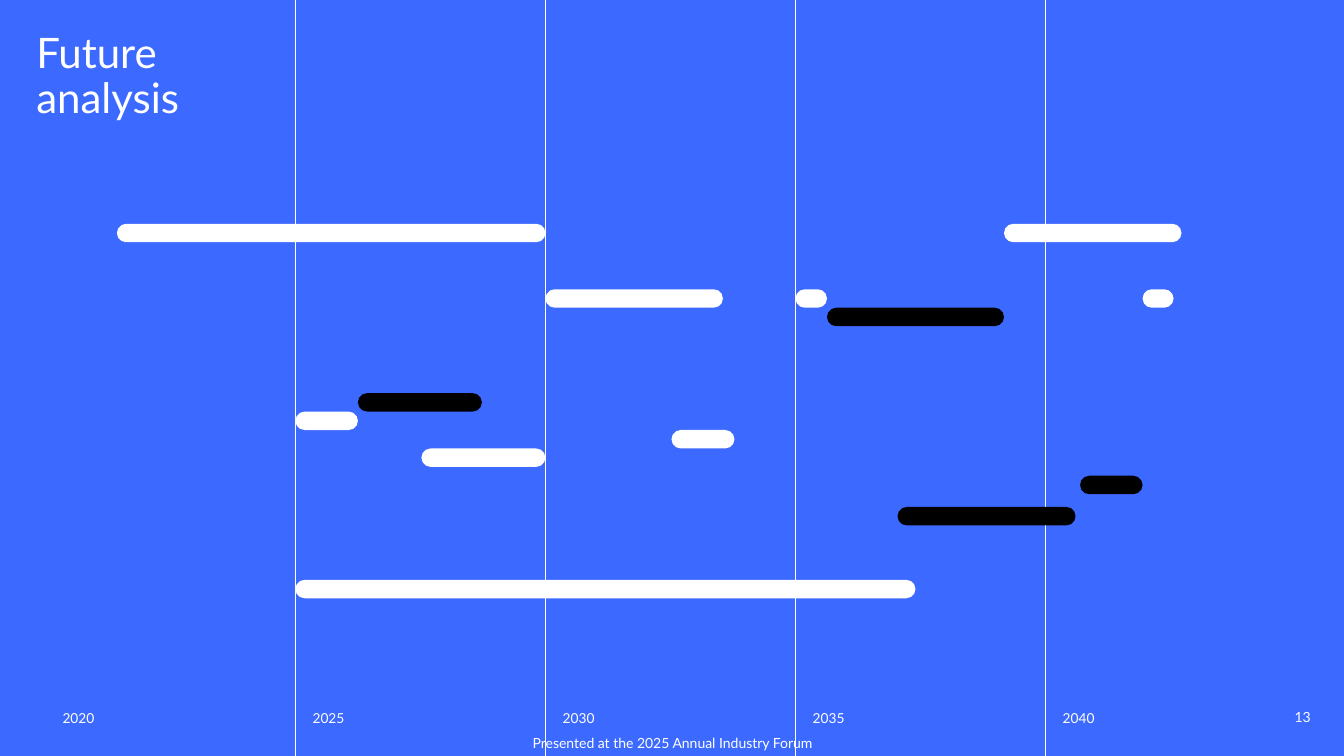
from pptx import Presentation, util as u
from pptx.dml.color import RGBColor
from pptx.enum import shapes, text
from pptx.oxml.ns import qn
from lxml import etree

WHITE, BLACK, BLUE = "FFFFFF", "000000", "3C69FF"
FIRST_YEAR, YEAR_STEP = 2020, 5
BARS = [
    (2021.43, 2030, 0, WHITE),
    (2025, 2037.4, 19.3, WHITE),
    (2026.25, 2028.73, 9.18, BLACK),
    (2027.52, 2030, 12.18, WHITE),
    (2032.52, 2033.78, 11.18, WHITE),
    (2025, 2026.25, 10.18, WHITE),
    (2040.69, 2041.94, 13.66, BLACK),
    (2030, 2033.55, 3.55, WHITE),
    (2037.04, 2040.6, 15.35, BLACK),
    (2035.63, 2039.17, 4.55, BLACK),
    (2039.17, 2042.72, 0, WHITE),
    (2035, 2035.63, 3.55, WHITE),
    (2041.94, 2042.56, 3.55, WHITE),
]


def colour(value):
    return RGBColor.from_string(value)


class Timeline:
    """Draws a year-and-row timeline on one slide in a single style."""

    font = "Lato"
    left, year_width = 0.45, 0.496
    top, row_height = 2.22, 0.183

    def __init__(self, presentation):
        self.height = presentation.slide_height
        self.slide = presentation.slides.add_slide(presentation.slide_layouts[6])
        background = self.slide.background.fill
        background.solid()
        background.fore_color.rgb = colour(BLUE)

    def x(self, year):
        return u.Inches(self.left + (year - FIRST_YEAR) * self.year_width)

    def y(self, row):
        return u.Inches(self.top + row * self.row_height)

    def text(self, lines, box, size, align="LEFT", anchor="TOP", wrap=True, spacing=None):
        frame = self.slide.shapes.add_textbox(*box).text_frame
        frame.margin_left = frame.margin_right = frame.margin_top = frame.margin_bottom = 0
        frame.word_wrap = wrap
        frame.vertical_anchor = text.MSO_ANCHOR[anchor]
        paragraph = frame.paragraphs[0]
        paragraph.alignment = text.PP_ALIGN[align]
        paragraph.line_spacing = spacing
        for index, line in enumerate(lines):
            if index:
                paragraph.add_line_break()
            run = paragraph.add_run()
            run.text = line
            run.font.name = self.font
            run.font.size = u.Pt(size)
            run.font.color.rgb = colour(WHITE)

    def year_line(self, year):
        x = self.x(year)
        line = self.slide.shapes.add_connector(
            shapes.MSO_CONNECTOR.STRAIGHT, x, 0, x, self.height)
        line.line.color.rgb = colour(WHITE)
        line.line.width = u.Pt(0.5)
        etree.SubElement(line._element.spPr, qn("a:effectLst"))

    def year_label(self, year):
        box = self.x(year) + u.Inches(0.17), u.Inches(6.98), u.Inches(0.51), u.Inches(0.29)
        self.text([str(year)], box, 9.8, anchor="MIDDLE", wrap=False)

    def bar(self, start, end, row, fill):
        shape = self.slide.shapes.add_shape(
            shapes.MSO_SHAPE.ROUNDED_RECTANGLE, self.x(start), self.y(row),
            self.x(end) - self.x(start), u.Inches(self.row_height))
        shape.adjustments[0] = 0.5
        shape.shadow.inherit = False
        shape.fill.solid()
        shape.fill.fore_color.rgb = colour(fill)
        shape.line.fill.background()


def main():
    presentation = Presentation()
    presentation.slide_width, presentation.slide_height = u.Inches(13.33), u.Inches(7.5)
    timeline = Timeline(presentation)
    years = range(FIRST_YEAR, 2041, YEAR_STEP)

    title_box = [u.Inches(n) for n in (0.36, 0.32, 5.91, 1.35)]
    number_box = [u.Inches(n) for n in (12.54, 7, 0.46, 0.2)]
    footer_box = [u.Inches(n) for n in (4.42, 7.25, 4.5, 0.2)]

    timeline.text(["Future ", "analysis"], title_box, 30, spacing=0.9)
    timeline.text(["13"], number_box, 10, "RIGHT", "BOTTOM")
    for year in years[1:]:
        timeline.year_line(year)
    for bar in BARS:
        timeline.bar(*bar)
    for year in years:
        timeline.year_label(year)
    timeline.text(["Presented at the 2025 Annual Industry Forum"], footer_box, 10,
                  "CENTER", "BOTTOM")
    presentation.save("out.pptx")


if __name__ == "__main__":
    main()
